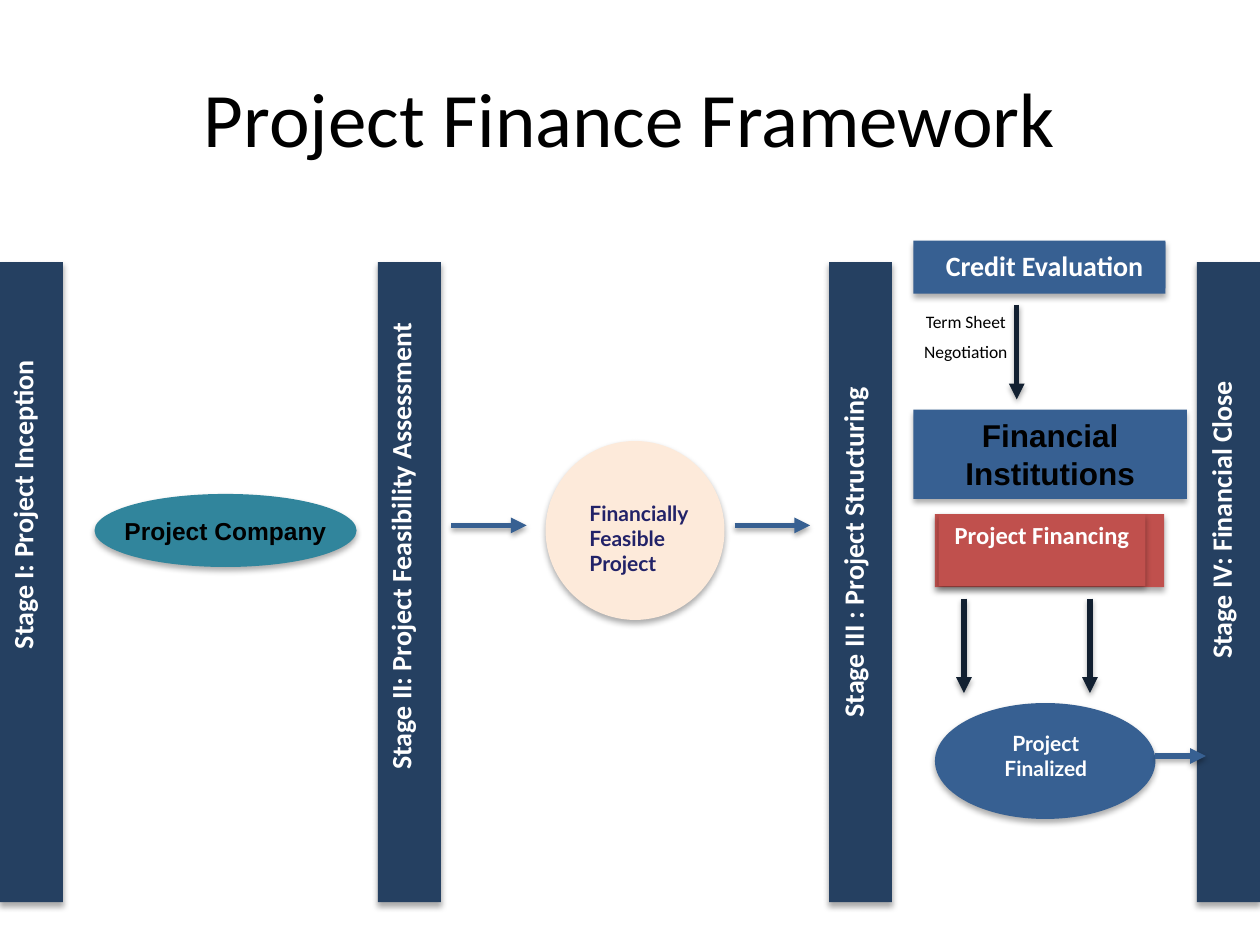
from lxml import etree
from pptx import Presentation
from pptx.dml.color import RGBColor
from pptx.enum.shapes import MSO_CONNECTOR, MSO_SHAPE
from pptx.enum.text import MSO_ANCHOR, PP_ALIGN
from pptx.oxml.ns import qn
from pptx.util import Inches, Pt

RECT, OVAL = MSO_SHAPE.RECTANGLE, MSO_SHAPE.OVAL
STRAIGHT = MSO_CONNECTOR.STRAIGHT
CENTER, LEFT = PP_ALIGN.CENTER, PP_ALIGN.LEFT
TOP, MIDDLE = MSO_ANCHOR.TOP, MSO_ANCHOR.MIDDLE
color = RGBColor.from_string

NAVY, BLUE, RED, TEAL, PEACH = "254061", "376092", "C0504D", "31859C", "FDEADA"
INK, INDIGO, BLACK, WHITE = "122031", "222268", "000000", "FFFFFF"


def add_shadow(properties, opacity=32, blur=3.5, distance=2.2):
    effects = etree.SubElement(properties, qn("a:effectLst"))
    shadow = etree.SubElement(effects, qn("a:outerShdw"), blurRad=str(Pt(blur)),
                              dist=str(Pt(distance)), dir="5400000", rotWithShape="0")
    tone = etree.SubElement(shadow, qn("a:srgbClr"), val=BLACK)
    etree.SubElement(tone, qn("a:alpha"), val=str(opacity * 1000))


def add_block(box, kind=None, fill=None, lines=(), size=16, font="Calibri", ink=WHITE,
              bold=True, align=CENTER, anchor=TOP, wrap=True, shadow=True):
    place = [Inches(value) for value in box]
    if kind is None:
        block = slide.shapes.add_textbox(*place)
    else:
        block = slide.shapes.add_shape(kind, *place)
        block.fill.solid()
        block.fill.fore_color.rgb = color(fill)
        block.line.fill.background()
        if shadow:
            add_shadow(block._element.spPr)
        else:
            block.shadow.inherit = False
    frame = block.text_frame
    frame.word_wrap = wrap
    frame.vertical_anchor = anchor
    for number, line in enumerate(lines):
        paragraph = frame.add_paragraph() if number else frame.paragraphs[0]
        paragraph.alignment = align
        paragraph.space_before = Pt(size / 2)
        run = paragraph.add_run()
        run.text = line
        run.font.size = Pt(size)
        run.font.name = font
        run.font.bold = bold
        run.font.color.rgb = color(ink)
    return block


prs = Presentation()
prs.slide_width, prs.slide_height = Inches(10), Inches(7.5)
slide = prs.slides.add_slide(prs.slide_layouts[5])

title = slide.shapes.title
title.left, title.top, title.width, title.height = [Inches(v) for v in (0.5, 0.3, 9, 1.25)]
title.text_frame.vertical_anchor = MIDDLE
heading = title.text_frame.paragraphs[0]
heading.alignment = CENTER
heading_run = heading.add_run()
heading_run.text = "Project Finance Framework"
heading_run.font.size = Pt(44)
heading_run.font.color.rgb = color(BLACK)
add_shadow(heading_run.font._element, 43, 3, 3)
heading_run.font.name = "Calibri"

stages = [
    (0, 0.18, 4, 3.67, "Stage I: Project Inception"),
    (3, 3.18, 4.33, 4.83, "Stage II: Project Feasibility Assessment"),
    (6.58, 6.77, 4.38, 4.25, "Stage III : Project Structuring"),
    (9.5, 9.69, 4.12, 4.25, "Stage IV: Financial Close"),
]
for bar_left, center_x, center_y, length, stage in stages:
    add_block((bar_left, 2.08, 0.5, 5.08), RECT, NAVY)
    label = add_block((center_x - length / 2, center_y - 0.18, length, 0.37), lines=[stage])
    label.rotation = 270

add_block((0.75, 3.92, 2.08, 0.58), OVAL, TEAL, ["Project Company"], size=14,
          font="Arial", ink=BLACK, anchor=MIDDLE, wrap=False)
add_block((4.33, 3.5, 1.42, 1.42), OVAL, PEACH)
add_block((4.58, 3.92, 1.09, 0.71), lines=["Financially Feasible Project"], size=12,
          font="Lato", ink=INDIGO, align=LEFT)

add_block((7.25, 1.91, 2, 0.42), RECT, BLUE)
add_block((7.33, 1.92, 1.92, 0.37), RECT, BLUE, ["Credit Evaluation"], shadow=False)
add_block((7.08, 2.42, 1.17, 0.52), lines=["Term Sheet", "Negotiation"], size=10,
          ink=BLACK, bold=False)
add_block((7.25, 3.25, 2.17, 0.71), RECT, BLUE, ["Financial Institutions"], size=18,
          font="Arial", ink=BLACK)
add_block((7.42, 4.08, 1.82, 0.58), RECT, RED)
add_block((7.45, 4.08, 1.64, 0.57), RECT, RED, ["Project Financing"], size=14)
add_block((7.42, 5.58, 1.75, 0.92), OVAL, BLUE)
add_block((7.84, 5.75, 0.92, 0.5), lines=["Project Finalized"], size=12, font="Lato")

arrows = [
    (3.58, 4.17, 0.6, 0, BLUE),
    (5.83, 4.17, 0.6, 0, BLUE),
    (9.17, 6, 0.4, 0, BLUE),
    (8.07, 2.42, 0, 0.75, INK),
    (7.65, 4.75, 0, 0.75, INK),
    (8.65, 4.75, 0, 0.75, INK),
]
for x, y, run_x, run_y, tint in arrows:
    arrow = slide.shapes.add_connector(STRAIGHT, Inches(x), Inches(y),
                                       Inches(x + run_x), Inches(y + run_y))
    arrow.line.width = Pt(3)
    arrow.line.color.rgb = color(tint)
    etree.SubElement(arrow.line._get_or_add_ln(), qn("a:tailEnd"), type="triangle")
    add_shadow(arrow._element.spPr, 35, 3.1, 1.8)

prs.save("out.pptx")
